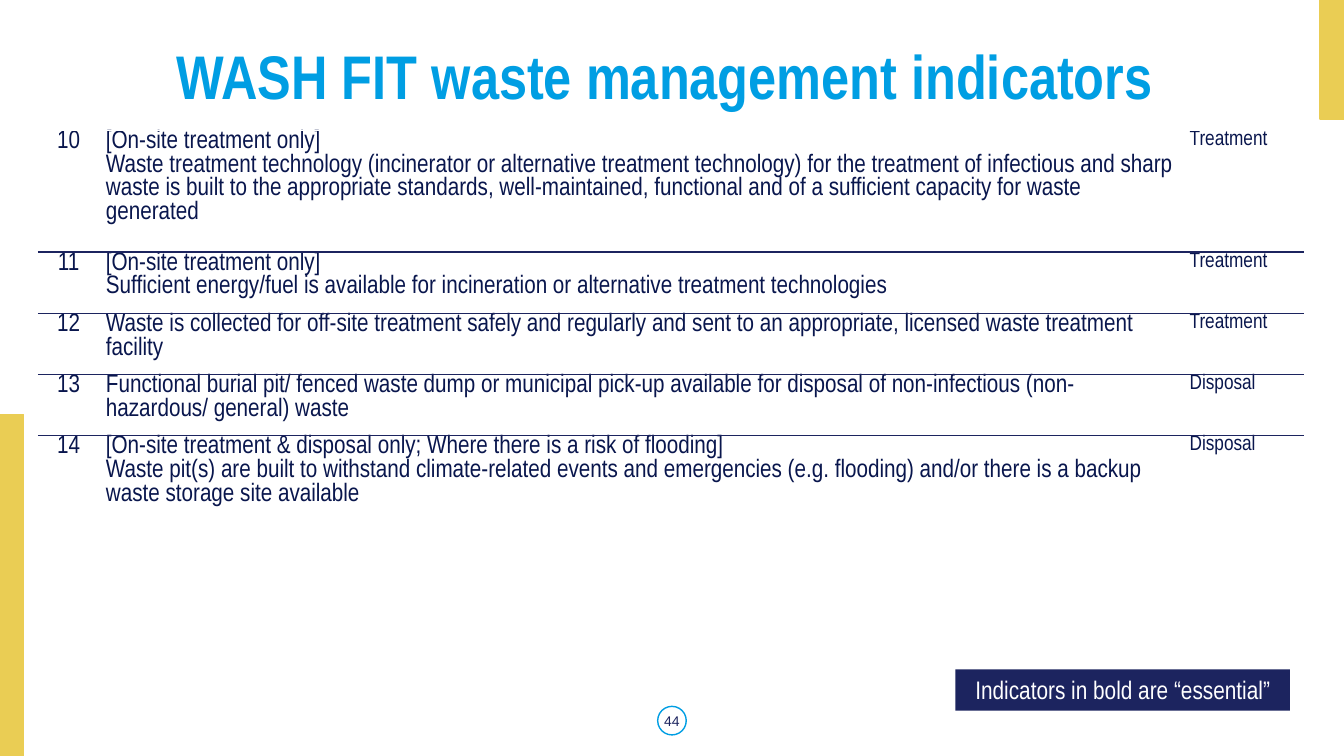
from lxml import etree
from pptx import Presentation
from pptx import util as u
from pptx.dml import color
from pptx.enum import shapes, text
from pptx.oxml import ns

NAVY, INK, SKY, GOLD, WHITE = "1C245F", "09164D", "009EE3", "EACD54", "FFFFFF"
NARROW = "Arial Narrow"
MID, LEFT = text.PP_ALIGN.CENTER, text.PP_ALIGN.LEFT
RECT, OVAL = shapes.MSO_SHAPE.RECTANGLE, shapes.MSO_SHAPE.OVAL

ROWS = [
    ("10", "[On-site treatment only] \vWaste treatment technology (incinerator or alternative "
     "treatment technology) for the treatment of infectious and sharp waste is built to the "
     "appropriate standards, well-maintained, functional and of a sufficient capacity for "
     "waste generated", "Treatment", 3.07),
    ("11", "[On-site treatment only] \vSufficient energy/fuel is available for incineration or "
     "alternative treatment technologies", "Treatment", 1.54),
    ("12", "Waste is collected for off-site treatment safely and regularly and sent to an "
     "appropriate, licensed waste treatment facility", "Treatment", 1.54),
    ("13", "Functional burial pit/ fenced waste dump or municipal pick-up available for disposal "
     "of non-infectious (non-hazardous/ general) waste", "Disposal", 1.54),
    ("14", "[On-site treatment & disposal only; Where there is a risk of flooding]\vWaste pit(s) "
     "are built to withstand climate-related events and emergencies (e.g. flooding) and/or "
     "there is a backup waste storage site available", "Disposal", 2.31),
]


def rgb(code):
    return color.RGBColor.from_string(code)


def put(item, form):
    for key, value in form.items():
        setattr(item, key, value)


def write(frame, words, size, tint, align=MID, face=NARROW, bold=False):
    par = frame.paragraphs[0]
    par.text = words
    par.alignment = align
    for run in par.runs:
        put(run.font, {"size": u.Pt(size), "name": face, "bold": bold})
        run.font.color.rgb = rgb(tint)
    return par


def shape(slide, kind, box, fill=None, line=None):
    item = slide.shapes.add_shape(kind, *map(u.Cm, box))
    item.shadow.inherit = False
    if fill:
        item.fill.solid()
        item.fill.fore_color.rgb = rgb(fill)
    else:
        item.fill.background()
    if line:
        item.line.color.rgb = rgb(line)
        item.line.width = u.Pt(1)
    else:
        item.line.fill.background()
    return item


def label(slide, box):
    frame = slide.shapes.add_textbox(*map(u.Cm, box)).text_frame
    put(frame, {"word_wrap": True, "vertical_anchor": text.MSO_ANCHOR.MIDDLE})
    return frame


def rule(cell, side):
    line = etree.Element(ns.qn("a:" + side), w=str(u.Pt(1)))
    fill = etree.SubElement(line, ns.qn("a:solidFill"))
    etree.SubElement(fill, ns.qn("a:srgbClr"), val=NAVY)
    cell._tc.get_or_add_tcPr().insert(0, line)


def bars(slide, wide, high):
    thick, long, short = 0.6, 8.61, 3.0
    for box in ((0, high - long, thick, long), (wide - thick, 0, thick, short)):
        shape(slide, RECT, box, GOLD, GOLD)


def title(slide, box):
    par = write(label(slide, box), "WASH FIT waste management indicators ", 44, SKY, bold=True)
    par.line_spacing = 0.9


def grid(slide, left, top, wide):
    number, kind = 1.52, 3.05
    cols = (number, wide - number - kind, kind)
    tall = sum(row[-1] for row in ROWS)
    table = slide.shapes.add_table(len(ROWS), len(cols), *map(u.Cm, (left, top, wide, tall))).table
    put(table, {"first_row": False, "horz_banding": False})
    for col, width in zip(table.columns, cols):
        col.width = u.Cm(width)
    looks = ((18, MID), (18, LEFT), (15, LEFT))
    for r, (*words, height) in enumerate(ROWS):
        table.rows[r].height = u.Cm(height)
        for c, (size, align) in enumerate(looks):
            cell = table.cell(r, c)
            put(cell, {"margin_left": u.Cm(0.18), "margin_right": u.Cm(0.18),
                       "margin_top": 0, "margin_bottom": 0})
            cell.fill.background()
            write(cell.text_frame, words[c], size, INK, align)
            if r < len(ROWS) - 1:
                rule(cell, "lnB")
            if r > 0:
                rule(cell, "lnT")


def note(slide, box):
    frame = shape(slide, RECT, box, NAVY).text_frame
    put(frame, {"word_wrap": True, "vertical_anchor": text.MSO_ANCHOR.TOP})
    write(frame, "Indicators in bold are “essential”", 18.1, WHITE)


def page(slide, wide, top):
    size, band = 0.72, 1.02
    shape(slide, OVAL, ((wide - size) / 2, top + 0.15, size, size), None, SKY)
    write(label(slide, (0, top, wide, band)), "44", 10, NAVY, face="Arial")


def main():
    wide, high = 33.87, 19.05
    deck = Presentation()
    put(deck, {"slide_width": u.Cm(wide), "slide_height": u.Cm(high)})
    slide = deck.slides.add_slide(deck.slide_layouts[6])
    bars(slide, wide, high)
    title(slide, (2.34, 1.02, 29.21, 1.98))
    grid(slide, 0.97, 3.28, 31.88)
    note(slide, (24.08, 16.87, 8.43, 1.04))
    page(slide, wide, 17.65)
    deck.save("out.pptx")


if __name__ == "__main__":
    main()
